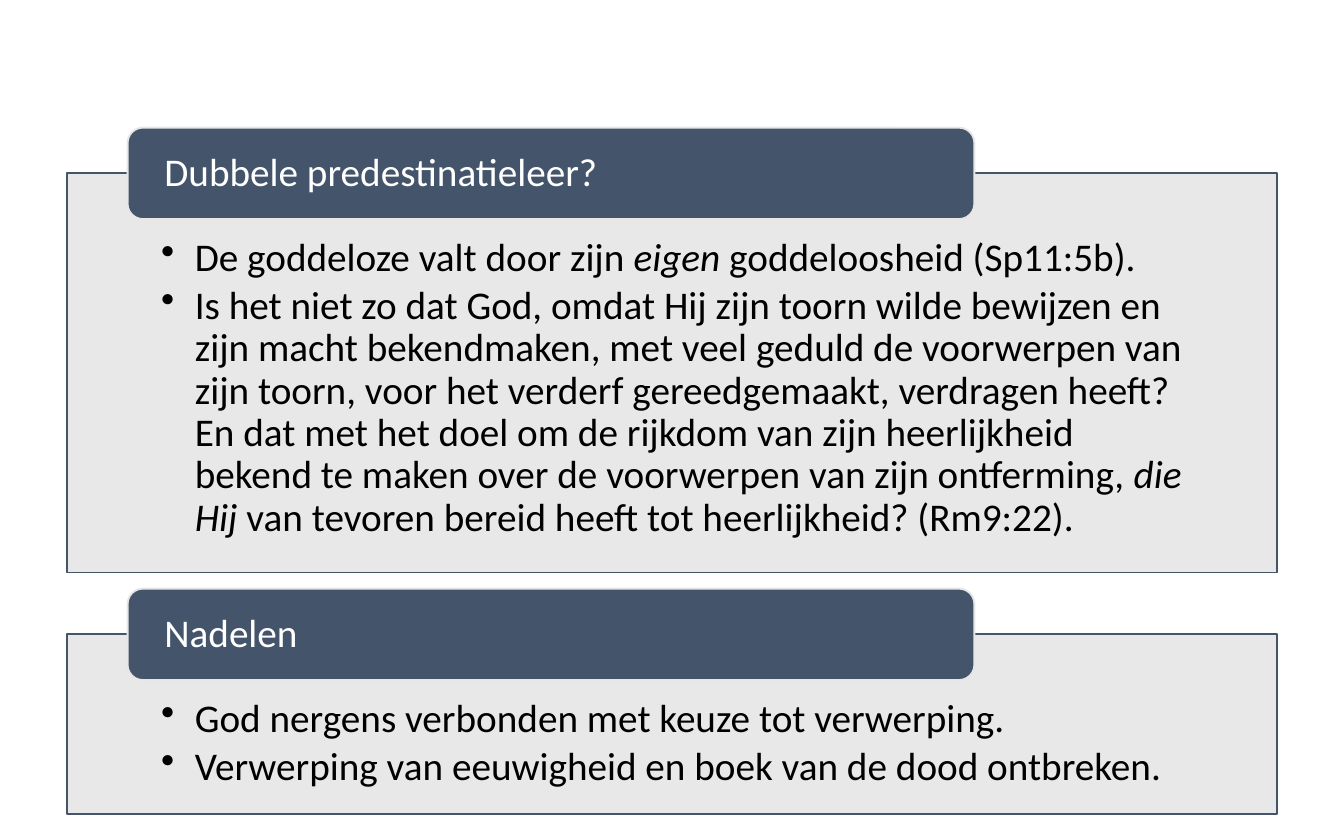
"""Build a slide with two titled panels of bullet points on predestination."""
from lxml import etree
from pptx import Presentation
from pptx.dml.color import RGBColor
from pptx.enum.shapes import MSO_SHAPE
from pptx.enum.text import MSO_ANCHOR, PP_ALIGN
from pptx.oxml.ns import qn
from pptx.util import Inches, Pt

RECTANGLE, ROUNDED = MSO_SHAPE.RECTANGLE, MSO_SHAPE.ROUNDED_RECTANGLE
TOP, MIDDLE = MSO_ANCHOR.TOP, MSO_ANCHOR.MIDDLE
LEFT = PP_ALIGN.LEFT
NAVY, GREY, BLACK, WHITE = "44546A", "E7E6E6", "000000", "FFFFFF"
TAB_RISE = 0.34

PANELS = [
    (1.29, 2.97, "Dubbele predestinatieleer?", [
        [("De goddeloze valt door zijn ", False), ("eigen", True),
         (" goddeloosheid (Sp11:5b).", False)],
        [("Is het niet zo dat God, omdat Hij zijn toorn wilde bewijzen en zijn macht "
          "bekendmaken, met veel geduld de voorwerpen van zijn toorn, voor het verderf "
          "gereedgemaakt, verdragen heeft? En dat met het doel om de rijkdom van zijn "
          "heerlijkheid bekend te maken over de voorwerpen van zijn ontferming, ", False),
         ("die Hij", True),
         (" van tevoren bereid heeft tot heerlijkheid? (Rm9:22).", False)],
    ]),
    (4.72, 1.34, "Nadelen", [
        [("God nergens verbonden met keuze tot verwerping.", False)],
        [("Verwerping van eeuwigheid en boek van de dood ontbreken.", False)],
    ]),
]


def add_box(kind, bounds, fill, line, anchor, insets):
    box = slide.shapes.add_shape(kind, *(Inches(value) for value in bounds))
    box.shadow.inherit = False
    box.fill.solid()
    box.fill.fore_color.rgb = RGBColor.from_string(fill)
    box.line.color.rgb = RGBColor.from_string(line)
    box.line.width = Pt(1)
    frame = box.text_frame
    frame.word_wrap = True
    frame.vertical_anchor = anchor
    frame.margin_left = frame.margin_right = Inches(insets[0])
    frame.margin_top, frame.margin_bottom = Inches(insets[1]), Inches(insets[2])
    return box


def write_para(para, spans, color):
    para.alignment = LEFT
    para.line_spacing = 0.9
    para.space_after = Pt(3)
    para.font.name = "Calibri"
    para.font.size = Pt(21)
    para.font.color.rgb = RGBColor.from_string(color)
    for text, italic in spans:
        span = para.add_run()
        span.text = text
        if italic:
            span.font.italic = True


deck = Presentation()
deck.slide_width, deck.slide_height = Inches(10), Inches(6.25)
slide = deck.slides.add_slide(deck.slide_layouts[6])

for top, height, title, bullets in PANELS:
    panel = add_box(RECTANGLE, (0.5, top, 9, height), GREY, NAVY, TOP, (0.7, 0.48, 0.16))
    fill_color = panel.fill._xPr.find(qn("a:solidFill"))[0]
    etree.SubElement(fill_color, qn("a:alpha"), val="90000")
    for index, spans in enumerate(bullets):
        frame = panel.text_frame
        para = frame.add_paragraph() if index else frame.paragraphs[0]
        write_para(para, spans, BLACK)
        para.level = 1
        properties = para._p.get_or_add_pPr()
        properties.set("marL", str(Inches(0.25)))
        properties.set("indent", str(-Inches(0.25)))
        bullet = etree.Element(qn("a:buChar"), char="•")
        properties.find(qn("a:defRPr")).addprevious(bullet)

    tab = add_box(ROUNDED, (0.95, top - TAB_RISE, 6.3, 0.68), NAVY, GREY, MIDDLE, (0.24, 0, 0))
    write_para(tab.text_frame.paragraphs[0], [(title, False)], WHITE)
    tab.text_frame.paragraphs[0].space_after = Pt(0)

deck.save("out.pptx")
